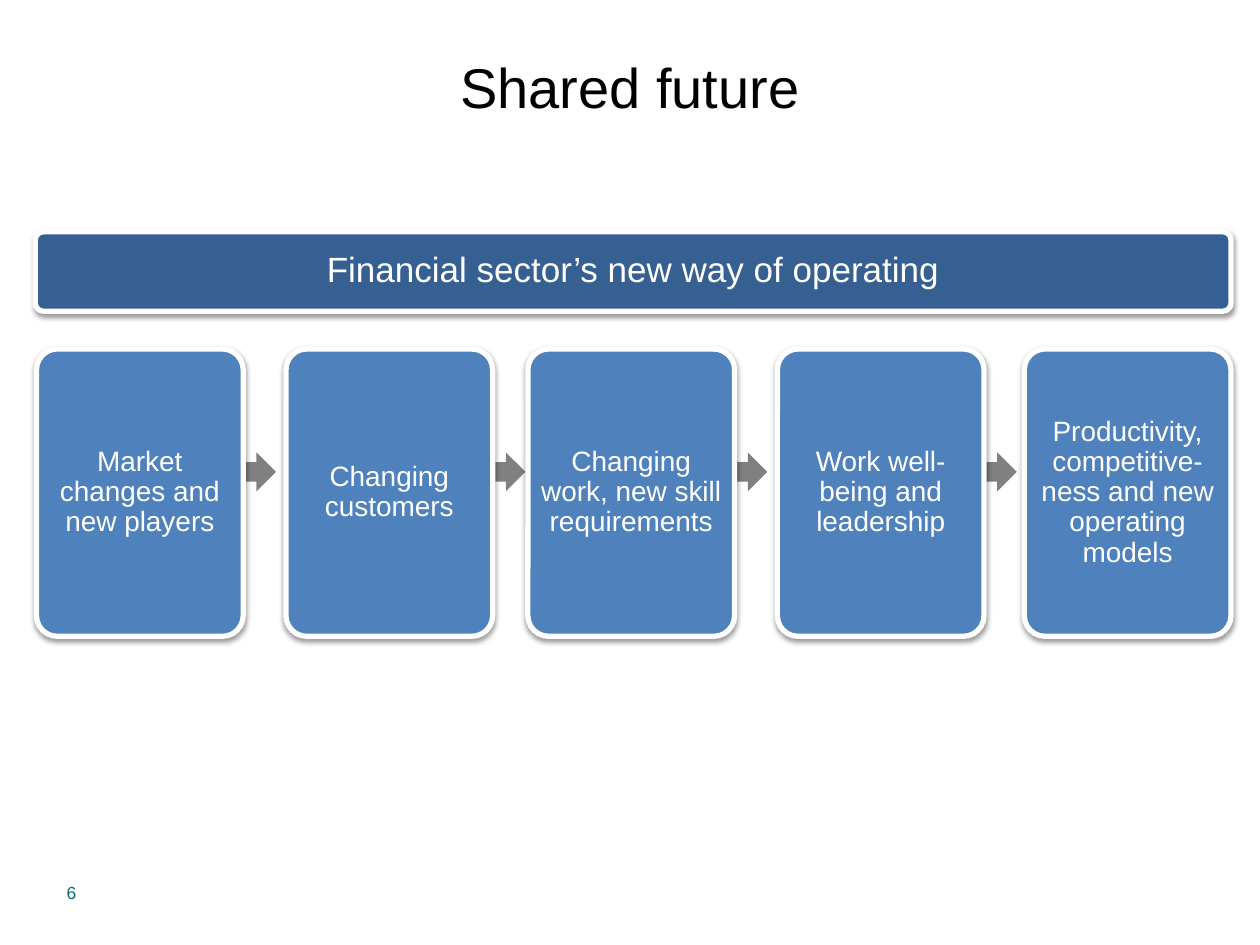
from lxml import etree
from pptx import Presentation
from pptx import util as u
from pptx.dml.color import RGBColor
from pptx.enum import shapes, text
from pptx.oxml import ns

COLORS = {
    "title": "000000",
    "number": "076E75",
    "arrow": "808080",
    "card": "4F81BD",
    "banner": "376092",
    "white": "FFFFFF",
    "shadow": "000000",
}
STEPS = [
    (0.29, "Market changes and new players"),
    (2.27, "Changing customers"),
    (4.19, "Changing work, new skill requirements"),
    (6.17, "Work well-being and leadership"),
    (8.13, "Productivity, competitive-ness and new operating models"),
]
CARD_WIDTH = 1.64
ARROW_SIZE = 0.31


def color(name):
    return RGBColor.from_string(COLORS[name])


def write(shape, words, size, color_name, align, anchor):
    frame = shape.text_frame
    frame.word_wrap = True
    frame.vertical_anchor = anchor
    paragraph = frame.paragraphs[0]
    paragraph.text = words
    paragraph.alignment = align
    paragraph.font.name = "Arial"
    paragraph.font.size = u.Pt(size)
    paragraph.font.color.rgb = color(color_name)
    return frame


def add_label(slide, box, words, size, color_name, align, anchor):
    label = slide.shapes.add_textbox(*map(u.Inches, box))
    write(label, words, size, color_name, align, anchor)


def add_soft_shadow(shape):
    shape.shadow.inherit = False
    effects = shape._element.spPr.find(ns.qn("a:effectLst"))
    shadow = etree.SubElement(
        effects, ns.qn("a:outerShdw"), blurRad=str(u.Pt(3.1)),
        dist=str(u.Pt(1.6)), dir="5400000", rotWithShape="0")
    tint = etree.SubElement(shadow, ns.qn("a:srgbClr"), val=COLORS["shadow"])
    etree.SubElement(tint, ns.qn("a:alpha"), val="38000")


def add_panel(slide, box, words, size, fill):
    """Rounded box with a white border, a soft shadow and centred text."""
    panel = slide.shapes.add_shape(
        shapes.MSO_SHAPE.ROUNDED_RECTANGLE, *map(u.Inches, box))
    panel.adjustments[0] = 0.1
    panel.fill.solid()
    panel.fill.fore_color.rgb = color(fill)
    panel.line.color.rgb = color("white")
    panel.line.width = u.Pt(3)
    add_soft_shadow(panel)
    frame = write(panel, words, size, "white",
                  text.PP_ALIGN.CENTER, text.MSO_ANCHOR.MIDDLE)
    frame.margin_left = frame.margin_right = u.Inches(0.03)
    frame.margin_top = frame.margin_bottom = u.Inches(0.03)
    frame.paragraphs[0].line_spacing = 0.9


def add_arrow(slide, left, top):
    arrow = slide.shapes.add_shape(
        shapes.MSO_SHAPE.RIGHT_ARROW, u.Inches(left), u.Inches(top),
        u.Inches(ARROW_SIZE), u.Inches(ARROW_SIZE))
    arrow.fill.solid()
    arrow.fill.fore_color.rgb = color("arrow")
    arrow.line.fill.background()
    arrow.shadow.inherit = False


def add_process(slide, top, height):
    """Row of step cards, with arrows tucked behind their right edges."""
    for left, _ in STEPS[:-1]:
        add_arrow(slide, left + CARD_WIDTH - 0.05, top + 0.82)
    for left, words in STEPS:
        add_panel(slide, (left, top, CARD_WIDTH, height), words, 16, "card")


def main():
    presentation = Presentation()
    presentation.slide_width = u.Inches(10)
    presentation.slide_height = u.Inches(7.5)
    slide = presentation.slides.add_slide(presentation.slide_layouts[6])
    add_label(slide, (0.5, 0.06, 9, 1.25), "Shared future", 32, "title",
              text.PP_ALIGN.CENTER, text.MSO_ANCHOR.MIDDLE)
    add_label(slide, (0.43, 6.95, 2.33, 0.4), "6", 10, "number",
              text.PP_ALIGN.LEFT, text.MSO_ANCHOR.TOP)
    add_process(slide, 2.77, 2.28)
    add_panel(slide, (0.28, 1.84, 9.49, 0.63),
              "Financial sector’s new way of operating", 20, "banner")
    presentation.save("out.pptx")


if __name__ == "__main__":
    main()
